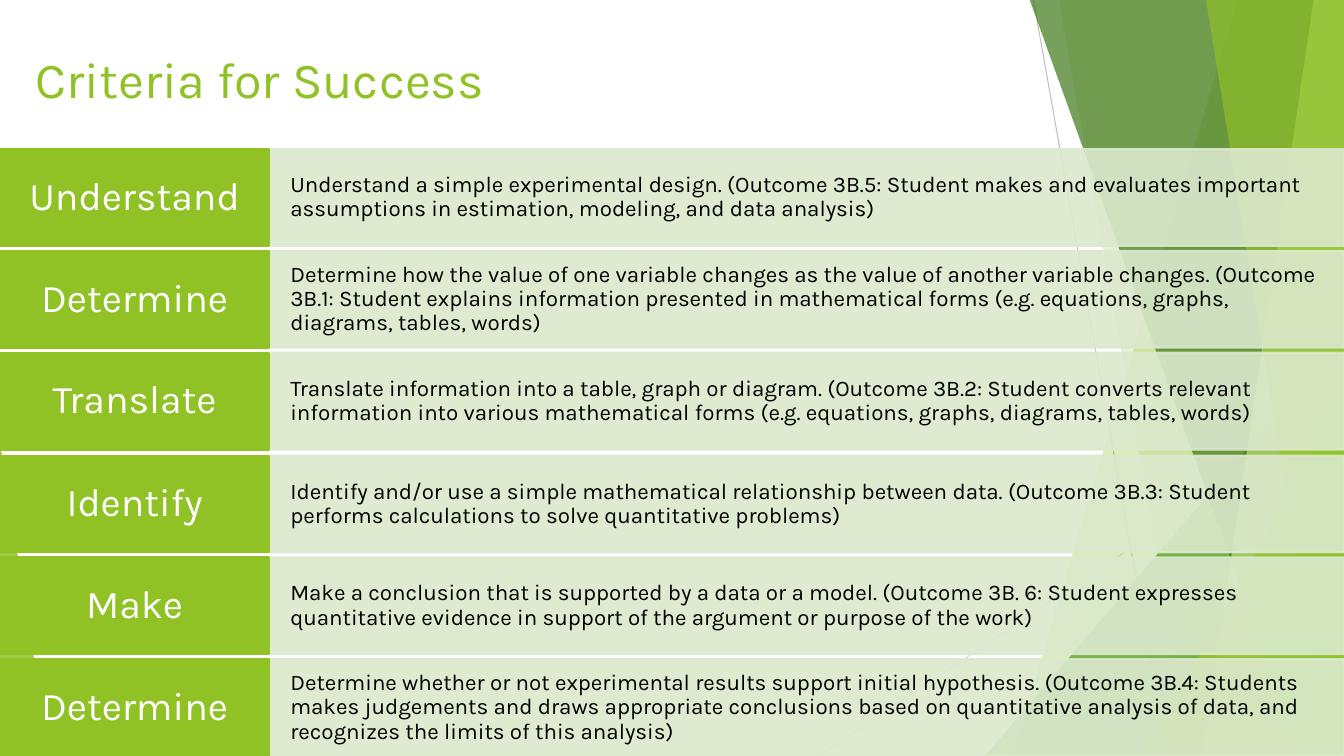
import pptx
import pptx.util
import pptx.dml.color
import pptx.enum.shapes
import pptx.enum.text
import pptx.oxml.ns
import pptx.oxml.xmlchemy

PX = 9144
WIDTH, HEIGHT = 1333, 750
FONT = "Karla"
GREEN = "90C226"
PALE = "DBE9CD"

RAYS = [("BFBFBF", (1025, 0, 1158, 750)), ("D9D9D9", (1333, 403, 812, 750))]
FACETS = [
    ("band", 1228, 1004, GREEN, 30),
    ("band", 1050, 1183, GREEN, 20),
    ("triangle", (977, 333, 356, 417), 1, "54A021", 72),
    ("band", 1021, 1291, "3F7819", 70),
    ("band", 1303, 1192, "C0E474", 70),
    ("band", 1196, 1318, GREEN, 65),
    ("triangle", (1134, 393, 199, 357), 1, GREEN, 80),
    ("triangle", (0, 439, 49, 311), 0, GREEN, 85),
]

CRITERIA = [
    ("Understand", "Understand a simple experimental design. (Outcome 3B.5: Student makes and "
     "evaluates important assumptions in estimation, modeling, and data analysis)"),
    ("Determine", "Determine how the value of one variable changes as the value of another "
     "variable changes. (Outcome 3B.1: Student explains information presented in mathematical "
     "forms (e.g. equations, graphs, diagrams, tables, words)"),
    ("Translate", "Translate information into a table, graph or diagram. (Outcome 3B.2: Student "
     "converts relevant information into various mathematical forms (e.g. equations, graphs, "
     "diagrams, tables, words)"),
    ("Identify", "Identify and/or use a simple mathematical relationship between data. (Outcome "
     "3B.3: Student performs calculations to solve quantitative problems)"),
    ("Make", "Make a conclusion that is supported by a data or a model. (Outcome 3B. 6: Student "
     "expresses quantitative evidence in support of the argument or purpose of the work)"),
    ("Determine", "Determine whether or not experimental results support initial hypothesis. "
     "(Outcome 3B.4: Students makes judgements and draws appropriate conclusions based on "
     "quantitative analysis of data, and recognizes the limits of this analysis)"),
]


def color(value):
    return pptx.dml.color.RGBColor.from_string(value)


def emu(*lengths):
    return [length * PX for length in lengths]


def paint(shape, value, opacity=100, outline=None):
    shape.shadow.inherit = False
    shape.fill.solid()
    shape.fill.fore_color.rgb = color(value)
    if outline:
        shape.line.color.rgb = color(value)
        shape.line.width = pptx.util.Pt(outline)
    else:
        shape.line.fill.background()
    if opacity < 100:
        for tint in shape._element.spPr.iter(pptx.oxml.ns.qn("a:srgbClr")):
            alpha = pptx.oxml.xmlchemy.OxmlElement("a:alpha")
            alpha.set("val", str(opacity * 1000))
            tint.append(alpha)


def style(para, size, value, align):
    para.alignment = align
    para.font.name = FONT
    para.font.size = pptx.util.Pt(size)
    para.font.color.rgb = color(value)


def add_ray(page, shade, ends):
    ray = page.shapes.add_connector(pptx.enum.shapes.MSO_CONNECTOR.STRAIGHT, *emu(*ends))
    ray.line.color.rgb = color(shade)
    ray.line.width = pptx.util.Pt(0.75)
    ray._element.spPr.append(pptx.oxml.xmlchemy.OxmlElement("a:effectLst"))


def add_band(page, top_left, bottom_left, value, opacity):
    outline = page.shapes.build_freeform(top_left, -1, scale=PX)
    outline.add_line_segments([(WIDTH, -1), (WIDTH, HEIGHT), (bottom_left, HEIGHT)])
    paint(outline.convert_to_shape(), value, opacity)


def add_triangle(page, box, apex, value, opacity):
    triangle = page.shapes.add_shape(
        pptx.enum.shapes.MSO_SHAPE.ISOSCELES_TRIANGLE, *emu(*box))
    triangle.adjustments[0] = apex
    paint(triangle, value, opacity)


def add_backdrop(page):
    for shade, ends in RAYS:
        add_ray(page, shade, ends)
    makers = {"band": add_band, "triangle": add_triangle}
    for kind, *details in FACETS:
        makers[kind](page, *details)


def add_title(page, box, text):
    title = page.shapes.title
    title.left, title.top, title.width, title.height = emu(*box)
    frame = title.text_frame
    frame.text = text
    frame.word_wrap = True
    frame.auto_size = pptx.enum.text.MSO_AUTO_SIZE.NONE
    frame.vertical_anchor = pptx.enum.text.MSO_ANCHOR.TOP
    style(frame.paragraphs[0], 36, GREEN, pptx.enum.text.PP_ALIGN.LEFT)


def add_cell(page, box, text, size, ink, align, insets, value, opacity=100):
    cell = page.shapes.add_shape(pptx.enum.shapes.MSO_SHAPE.RECTANGLE, *emu(*box))
    paint(cell, value, opacity, outline=1.5)
    frame = cell.text_frame
    frame.text = text
    frame.word_wrap = True
    frame.vertical_anchor = pptx.enum.text.MSO_ANCHOR.MIDDLE
    frame.margin_left = frame.margin_right = insets[0] * PX
    frame.margin_top = frame.margin_bottom = insets[1] * PX
    para = frame.paragraphs[0]
    para.line_spacing = 0.9
    style(para, size, ink, align)


def add_criteria(page, box):
    left, top, width, height = box
    row_height, verb_width = 96, 267
    pitch = (height - row_height) / (len(CRITERIA) - 1)
    for index, (verb, detail) in enumerate(CRITERIA):
        row_top = top + round(index * pitch)
        add_cell(page, (left + verb_width, row_top, width - verb_width, row_height), detail,
                 16, "000000", pptx.enum.text.PP_ALIGN.LEFT, (21, 24), PALE, 90)
        add_cell(page, (left, row_top, verb_width, row_height), verb,
                 28, "FFFFFF", pptx.enum.text.PP_ALIGN.CENTER, (14, 9), GREEN)


def main():
    deck = pptx.Presentation()
    deck.slide_width, deck.slide_height = emu(WIDTH, HEIGHT)
    page = deck.slides.add_slide(deck.slide_layouts[5])
    add_backdrop(page)
    add_title(page, (25, 43, 940, 144), "Criteria for Success")
    add_criteria(page, (0, 148, WIDTH, 602))
    deck.save("out.pptx")


if __name__ == "__main__":
    main()
